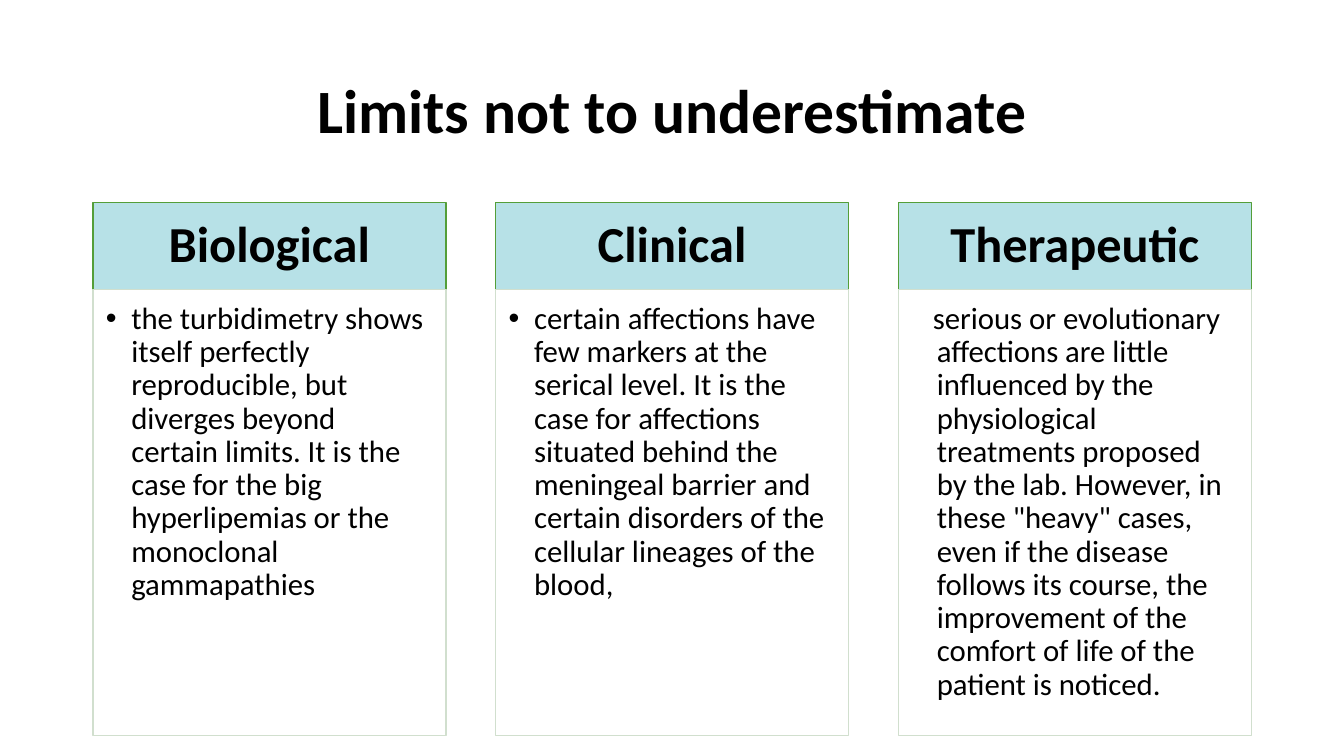
from lxml import etree
from pptx import Presentation
from pptx.dml.color import RGBColor
from pptx.enum.shapes import MSO_SHAPE
from pptx.enum.text import MSO_ANCHOR as ANCHOR, PP_ALIGN as ALIGN
from pptx.oxml.ns import qn
from pptx.util import Cm, Pt

TITLE = "Limits not to underestimate"
# heading, body, has a bullet
COLUMNS = [
    ("Biological",
     "the turbidimetry shows itself perfectly reproducible, but diverges beyond "
     "certain limits. It is the case for the big hyperlipemias or the monoclonal "
     "gammapathies", True),
    ("Clinical",
     "certain affections have few markers at the serical level. It is the case for "
     "affections situated behind the meningeal barrier and certain disorders of the "
     "cellular lineages of the blood,", True),
    ("Therapeutic",
     "serious or evolutionary affections are little influenced by the physiological "
     "treatments proposed by the lab. However, in these \"heavy\" cases, even if the "
     "disease follows its course, the improvement of the comfort of life of the "
     "patient is noticed.", False),
]
FONT, BLACK = "Calibri", "000000"
HEAD_FILL, HEAD_LINE, BODY_LINE = "B7E1E7", "549E39", "D1DFCE"

# Layout in centimetres
LEFT, COLUMN_W, PITCH = 2.34, 8.9, 10.15
HEAD_TOP, HEAD_H, BODY_H = 5.1, 2.2, 11.23
TEXT_INDENT, BULLET_HANG, PLAIN_HANG = 0.64, 0.64, 0.1


def rgb(color):
    return RGBColor.from_string(color)


def add_text(sp, text, size, bold=False, align=ALIGN.LEFT, anchor=ANCHOR.TOP,
             insets=(0.25, 0.13, 0.25, 0.13)):
    """Fill a shape with one paragraph; insets are left, top, right, bottom in cm."""
    tf = sp.text_frame
    tf.word_wrap, tf.vertical_anchor = True, anchor
    (tf.margin_left, tf.margin_top,
     tf.margin_right, tf.margin_bottom) = map(Cm, insets)
    p = tf.paragraphs[0]
    p.alignment, p.line_spacing = align, 0.9
    r = p.add_run()
    r.text = text
    r.font.name, r.font.size, r.font.bold = FONT, Pt(size), bold
    r.font.color.rgb = rgb(BLACK)
    return p


def set_indent(p, hang, bullet):
    pPr = p._p.get_or_add_pPr()
    pPr.set("marL", str(Cm(TEXT_INDENT)))
    pPr.set("indent", str(-Cm(hang)))
    if bullet:
        etree.SubElement(pPr, qn("a:buFont")).set("typeface", "Arial")
        etree.SubElement(pPr, qn("a:buChar")).set("char", "•")
    else:
        etree.SubElement(pPr, qn("a:buNone"))


def add_box(s, x, y, h, line, fill=None):
    sp = s.shapes.add_shape(MSO_SHAPE.RECTANGLE, Cm(x), Cm(y), Cm(COLUMN_W), Cm(h))
    sp.shadow.inherit = False
    sp.line.color.rgb, sp.line.width = rgb(line), Pt(1)
    if fill:
        sp.fill.solid()
        sp.fill.fore_color.rgb = rgb(fill)
    else:
        sp.fill.background()
    return sp


def main():
    prs = Presentation()
    prs.slide_width, prs.slide_height = Cm(33.87), Cm(19.05)
    s = prs.slides.add_slide(prs.slide_layouts[6])

    title = s.shapes.add_textbox(Cm(LEFT), Cm(1.01), Cm(29.21), Cm(3.68))
    add_text(title, TITLE, 44, bold=True, align=ALIGN.CENTER, anchor=ANCHOR.MIDDLE)

    for i, (heading, body, bullet) in enumerate(COLUMNS):
        x = LEFT + i * PITCH
        head = add_box(s, x, HEAD_TOP, HEAD_H, HEAD_LINE, HEAD_FILL)
        add_text(head, heading, 36, bold=True, align=ALIGN.CENTER,
                 anchor=ANCHOR.MIDDLE, insets=(0.71, 0.41, 0.71, 0.41))
        panel = add_box(s, x, HEAD_TOP + HEAD_H, BODY_H, BODY_LINE)
        p = add_text(panel, body, 22, insets=(0.33, 0.33, 0.43, 0.48))
        set_indent(p, BULLET_HANG if bullet else PLAIN_HANG, bullet)

    prs.save("out.pptx")


if __name__ == "__main__":
    main()
